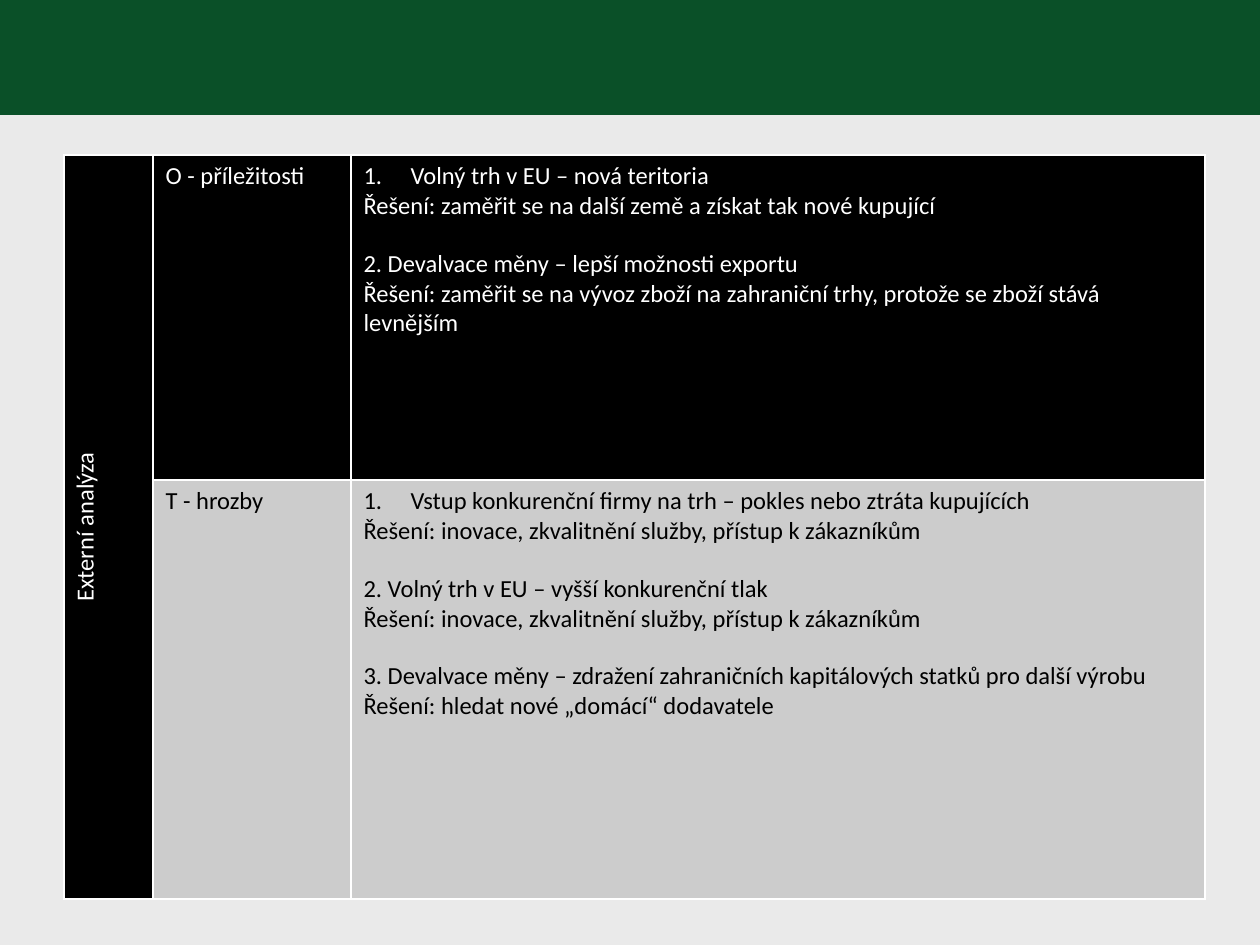
import pptx
import pptx.util
import pptx.dml.color
import pptx.enum.shapes
import pptx.enum.text
import pptx.oxml
import pptx.oxml.ns

SCALE = 914400 / 126


def px(n):
    return pptx.util.Emu(round(n * SCALE))


def color(code):
    return pptx.dml.color.RGBColor.from_string(code)


class Deck:
    font = "Calibri"
    size = 14
    indent = 47
    gap = 16

    def __init__(self, wide, high, back):
        self.deck = pptx.Presentation()
        self.deck.slide_width, self.deck.slide_height = px(wide), px(high)
        self.slide = self.deck.slides.add_slide(self.deck.slide_layouts[6])
        fill = self.slide.background.fill
        fill.solid()
        fill.fore_color.rgb = color(back)

    def band(self, left, top, wide, high, fill):
        shape = self.slide.shapes.add_shape(
            pptx.enum.shapes.MSO_SHAPE.RECTANGLE, px(left), px(top), px(wide), px(high))
        shape.shadow.inherit = False
        shape.fill.solid()
        shape.fill.fore_color.rgb = color(fill)
        shape.line.fill.background()

    def grid(self, left, top, cols, rows):
        table = self.slide.shapes.add_table(
            len(rows), len(cols), px(left), px(top), px(sum(cols)), px(sum(rows))).table
        table.first_row = table.horz_banding = False
        for col, wide in zip(table.columns, cols):
            col.width = px(wide)
        for row, high in zip(table.rows, rows):
            row.height = px(high)
        return table

    def edge(self, cell, line):
        props = cell._tc.get_or_add_tcPr()
        for spot, side in enumerate("LRTB"):
            props.insert(spot, pptx.oxml.parse_xml(
                f'<a:ln{side} {pptx.oxml.ns.nsdecls("a")} w="12700"><a:solidFill>'
                f'<a:srgbClr val="{line}"/></a:solidFill></a:ln{side}>'))

    def paint(self, cell, fill, line="FFFFFF"):
        self.edge(cell, line)
        cell.fill.solid()
        cell.fill.fore_color.rgb = color(fill)

    def text(self, para, words, ink):
        run = para.add_run()
        run.text = words
        run.font.name = self.font
        run.font.size = pptx.util.Pt(self.size)
        run.font.color.rgb = color(ink)

    def number(self, para):
        props = para._p.get_or_add_pPr()
        props.set("marL", str(px(self.indent)))
        props.set("indent", str(-px(self.indent)))
        props.append(pptx.oxml.parse_xml(
            f'<a:buFont {pptx.oxml.ns.nsdecls("a")} typeface="+mj-lt"/>'))
        props.append(pptx.oxml.parse_xml(
            f'<a:buAutoNum {pptx.oxml.ns.nsdecls("a")} type="arabicPeriod"/>'))

    def pairs(self, cell, items, ink):
        frame = cell.text_frame
        for spot, (head, plan) in enumerate(items):
            para = frame.add_paragraph() if spot else frame.paragraphs[0]
            if spot:
                para.space_before = pptx.util.Pt(self.gap)
                head = f"{spot + 1}. {head}"
            else:
                self.number(para)
            self.text(para, head, ink)
            self.text(frame.add_paragraph(), f"Řešení: {plan}", ink)

    def side(self, first, last, words, ink):
        first.merge(last)
        first.vertical_anchor = pptx.enum.text.MSO_ANCHOR.MIDDLE
        first._tc.get_or_add_tcPr().set("vert", "vert270")
        para = first.text_frame.paragraphs[0]
        para.alignment = pptx.enum.text.PP_ALIGN.CENTER
        self.text(para, words, ink)


def main():
    deck = Deck(1260, 945, "EAEAEA")
    deck.band(0, 0, 1260, 115, "0A5028")

    better = "inovace, zkvalitnění služby, přístup k zákazníkům"
    groups = [
        ("O - příležitosti", "000000", "FFFFFF", [
            ("Volný trh v EU – nová teritoria",
             "zaměřit se na další země a získat tak nové kupující"),
            ("Devalvace měny – lepší možnosti exportu",
             "zaměřit se na vývoz zboží na zahraniční trhy, "
             "protože se zboží stává levnějším"),
        ]),
        ("T - hrozby", "CCCCCC", "000000", [
            ("Vstup konkurenční firmy na trh – pokles nebo ztráta kupujících", better),
            ("Volný trh v EU – vyšší konkurenční tlak", better),
            ("Devalvace měny – zdražení zahraničních kapitálových statků "
             "pro další výrobu", "hledat nové „domácí“ dodavatele"),
        ]),
    ]
    table = deck.grid(64, 155, [89, 198, 854], [325, 419])
    for row, (name, fill, ink, items) in enumerate(groups):
        deck.paint(table.cell(row, 0), "000000")
        deck.paint(table.cell(row, 1), fill)
        deck.paint(table.cell(row, 2), fill)
        deck.text(table.cell(row, 1).text_frame.paragraphs[0], name, ink)
        deck.pairs(table.cell(row, 2), items, ink)
    deck.side(table.cell(0, 0), table.cell(1, 0), "Externí analýza", "FFFFFF")
    deck.deck.save("out.pptx")


if __name__ == "__main__":
    main()
